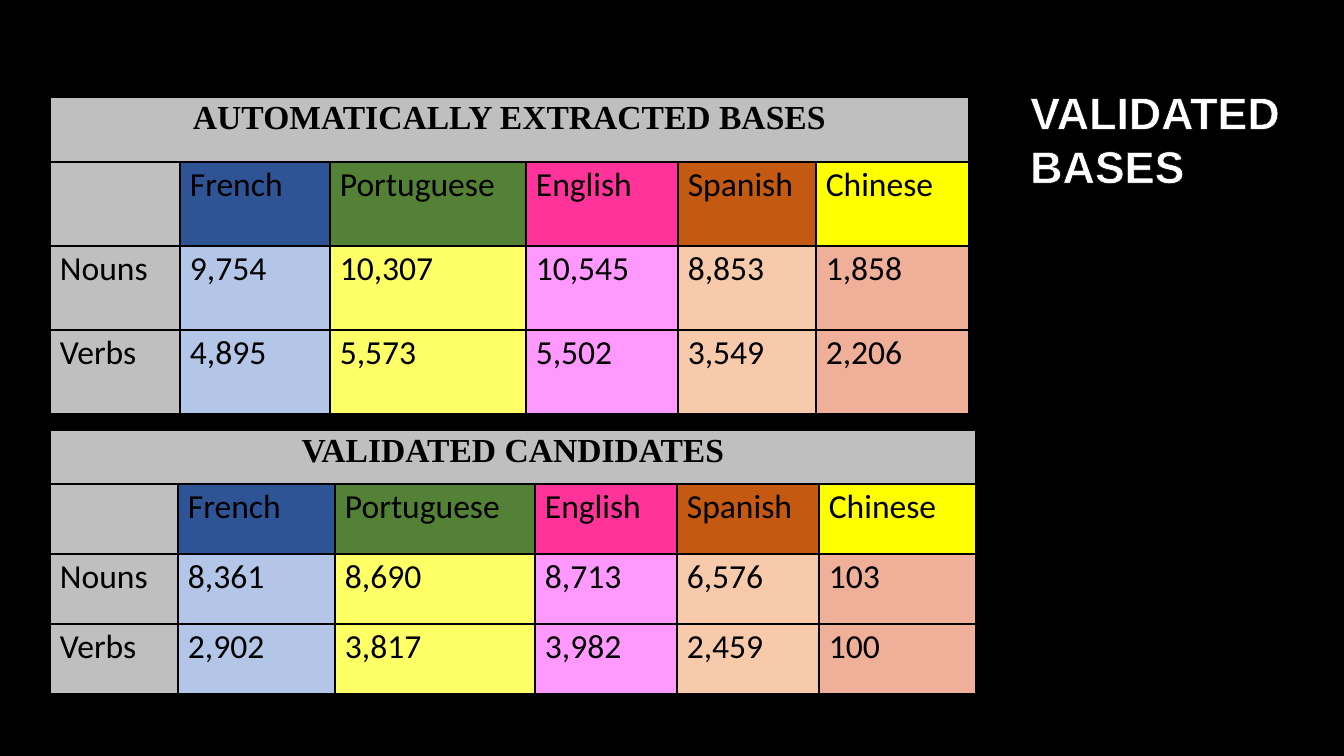
"""Build the slide comparing extracted and validated bases by language."""
import dataclasses

import lxml.etree
import pptx
import pptx.dml.color
import pptx.enum.text
import pptx.oxml.ns
import pptx.util

PX = 914400 / 134.4


@dataclasses.dataclass(frozen=True)
class Theme:
    background: str = "000000"
    ink: str = "000000"
    heading: str = "FFFFFF"
    label: str = "BFBFBF"
    header_fills: tuple = ("2F5496", "538135", "FF3399", "C45911", "FFFF00")
    value_fills: tuple = ("B4C6E7", "FFFF66", "FF99FF", "F7CAAC", "F0AF98")
    heading_font: str = "Arial"
    title_font: str = "Times New Roman"
    body_font: str = "Calibri"
    heading_size: int = 24
    table_size: int = 18
    border: float = 1
    outline: float = 1.06


def px(n):
    return pptx.util.Emu(round(n * PX))


def rgb(color):
    return pptx.dml.color.RGBColor.from_string(color)


def add_line(parent, tag, color, width):
    ln = lxml.etree.SubElement(parent, pptx.oxml.ns.qn(tag), w=str(pptx.util.Pt(width)))
    fill = lxml.etree.SubElement(ln, pptx.oxml.ns.qn("a:solidFill"))
    lxml.etree.SubElement(fill, pptx.oxml.ns.qn("a:srgbClr"), val=color)
    return ln


class Deck:
    def __init__(self, theme):
        self.theme = theme
        self.prs = pptx.Presentation()
        self.prs.slide_width, self.prs.slide_height = px(1344), px(756)
        self.s = self.prs.slides.add_slide(self.prs.slide_layouts[6])
        self.s.background.fill.solid()
        self.s.background.fill.fore_color.rgb = rgb(theme.background)

    def run(self, p, text, font, size, color, bold=False):
        r = p.add_run()
        r.text = text
        r.font.name, r.font.size, r.font.bold = font, pptx.util.Pt(size), bold
        r.font.color.rgb = rgb(color)
        return r

    def heading(self, text, x, y, w, h):
        t = self.theme
        tf = self.s.shapes.add_textbox(px(x), px(y), px(w), px(h)).text_frame
        tf.word_wrap = True
        tf.auto_size = pptx.enum.text.MSO_AUTO_SIZE.SHAPE_TO_FIT_TEXT
        r = self.run(tf.paragraphs[0], text, t.heading_font, t.heading_size, t.heading, True)
        rpr = r.font._element
        rpr.insert(0, add_line(rpr, "a:ln", t.ink, t.outline))

    def cell(self, cell, text, fill, title=False):
        t = self.theme
        cell.margin_left = cell.margin_right = px(10)
        cell.margin_top = cell.margin_bottom = 0
        tcpr = cell._tc.get_or_add_tcPr()
        for side in "LRTB":
            add_line(tcpr, f"a:ln{side}", t.ink, t.border)
        cell.fill.solid()
        cell.fill.fore_color.rgb = rgb(fill)
        if not text:
            return
        p = cell.text_frame.paragraphs[0]
        p.line_spacing = 1.07
        p.space_after = pptx.util.Pt(6 if title else 8)
        if title:
            p.alignment = pptx.enum.text.PP_ALIGN.CENTER
        font = t.title_font if title else t.body_font
        self.run(p, text, font, t.table_size, t.ink, title)

    def table(self, title, rows, x, y, widths, heights):
        t = self.theme
        frame = self.s.shapes.add_table(
            len(heights), len(widths), px(x), px(y), px(sum(widths)), px(sum(heights)))
        table = frame.table
        table.first_row = table.horz_banding = False
        for column, width in zip(table.columns, widths):
            column.width = px(width)
        for row, height in zip(table.rows, heights):
            row.height = px(height)
        table.cell(0, 0).merge(table.cell(0, len(widths) - 1))
        for j in range(len(widths)):
            self.cell(table.cell(0, j), "" if j else title, t.label, True)
        for i, row in enumerate(rows, 1):
            fills = (t.label, *(t.header_fills if i == 1 else t.value_fills))
            for j, (text, fill) in enumerate(zip(row, fills)):
                self.cell(table.cell(i, j), text, fill)


def main():
    deck = Deck(Theme())
    languages = ("", "French", "Portuguese", "English", "Spanish", "Chinese")
    deck.heading("VALIDATED BASES", 1017, 78, 327, 122)
    deck.table(
        "AUTOMATICALLY EXTRACTED BASES",
        (languages,
         ("Nouns", "9,754", "10,307", "10,545", "8,853", "1,858"),
         ("Verbs", "4,895", "5,573", "5,502", "3,549", "2,206")),
        50, 97, (130, 150, 196, 152, 138, 153), (65, 84, 84, 84))
    deck.table(
        "VALIDATED CANDIDATES",
        (languages,
         ("Nouns", "8,361", "8,690", "8,713", "6,576", "103"),
         ("Verbs", "2,902", "3,817", "3,982", "2,459", "100")),
        50, 430, (128, 157, 200, 142, 142, 157), (54, 70, 70, 70))
    deck.prs.save("out.pptx")


if __name__ == "__main__":
    main()
